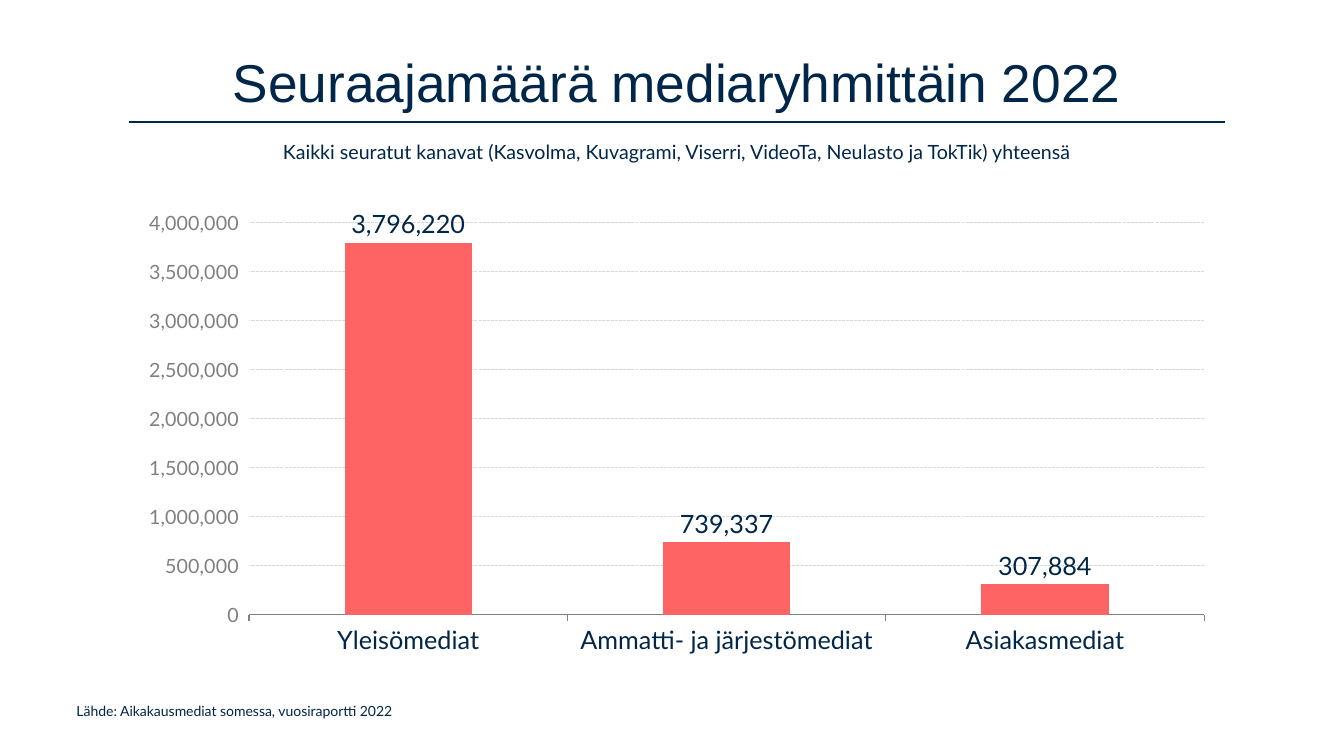
from dataclasses import dataclass

from lxml import etree
from pptx import Presentation
from pptx.chart.data import CategoryChartData
from pptx.dml.color import RGBColor
from pptx.enum.chart import XL_CHART_TYPE as ChartType
from pptx.enum.chart import XL_LABEL_POSITION as LabelPos
from pptx.enum.chart import XL_TICK_MARK as Tick
from pptx.enum.dml import MSO_LINE as Dash
from pptx.enum.shapes import MSO_CONNECTOR as Connector
from pptx.enum.text import MSO_ANCHOR as Anchor
from pptx.enum.text import MSO_AUTO_SIZE as AutoSize
from pptx.enum.text import PP_ALIGN as Align
from pptx.oxml.ns import qn
from pptx.util import Inches, Pt


@dataclass(frozen=True)
class Theme:
    navy: str = "002649"
    coral: str = "FF6464"
    gray: str = "808080"
    grid: str = "D9D9D9"
    heading_font: str = "Arial"
    body_font: str = "Lato"
    title_size: int = 38
    label_size: int = 18
    text_size: int = 14
    source_size: int = 10


THEME = Theme()
LEFT, WIDTH = 1.28, 10.87


def rgb(color):
    return RGBColor.from_string(color)


def style_font(font, size, color=THEME.navy, name=THEME.body_font):
    font.name = name
    font.size = Pt(size)
    font.bold = False
    font.color.rgb = rgb(color)


def write_text(tf, text, size, name=THEME.body_font, align=Align.LEFT,
               anchor=Anchor.TOP, spacing=None, auto_size=AutoSize.NONE):
    tf.word_wrap = True
    tf.auto_size = auto_size
    tf.vertical_anchor = anchor
    p = tf.paragraphs[0]
    p.alignment = align
    p.line_spacing = spacing
    r = p.add_run()
    r.text = text
    style_font(r.font, size, name=name)


def add_header(slide, title, subtitle, x, y, w):
    sp = slide.shapes.title
    sp.left, sp.top, sp.width, sp.height = map(Inches, (x, y, w, 0.71))
    write_text(sp.text_frame, title, THEME.title_size, name=THEME.heading_font,
               align=Align.CENTER, anchor=Anchor.MIDDLE, spacing=0.9)

    rule_y = Inches(y + 0.72)
    rule = slide.shapes.add_connector(Connector.STRAIGHT, Inches(x), rule_y,
                                      Inches(x + w), rule_y)
    rule.line.color.rgb = rgb(THEME.navy)
    rule.line.width = Pt(1)
    etree.SubElement(rule._element.spPr, qn("a:effectLst"))

    box = slide.shapes.add_textbox(*map(Inches, (x, y + 0.85, w, 0.34)))
    write_text(box.text_frame, subtitle, THEME.text_size, align=Align.CENTER,
               auto_size=AutoSize.SHAPE_TO_FIT_TEXT)


def add_follower_chart(slide, followers, x, y, w, h):
    data = CategoryChartData(number_format="#,##0")
    data.categories = list(followers)
    data.add_series("Series 1", list(followers.values()))
    chart = slide.shapes.add_chart(ChartType.COLUMN_CLUSTERED,
                                   *map(Inches, (x, y, w, h)), data).chart
    chart.has_legend = False
    chart.has_title = False
    style_font(chart.font, THEME.label_size)

    cat_axis = chart.category_axis
    cat_axis.major_tick_mark = Tick.OUTSIDE
    cat_axis.format.line.color.rgb = rgb(THEME.gray)
    style_font(cat_axis.tick_labels.font, THEME.label_size)

    val_axis = chart.value_axis
    val_axis.minimum_scale = 0
    val_axis.maximum_scale = 4_000_000
    val_axis.major_unit = 500_000
    val_axis.major_tick_mark = Tick.OUTSIDE
    val_axis.format.line.fill.background()
    val_axis.tick_labels.number_format = "#,##0"
    val_axis.tick_labels.number_format_is_linked = False
    style_font(val_axis.tick_labels.font, THEME.text_size, THEME.gray)
    grid = val_axis.major_gridlines.format.line
    grid.color.rgb = rgb(THEME.grid)
    grid.width = Pt(0.75)
    grid.dash_style = Dash.SQUARE_DOT

    plot = chart.plots[0]
    plot.gap_width = 150
    plot.vary_by_categories = False
    fill = plot.series[0].format.fill
    fill.solid()
    fill.fore_color.rgb = rgb(THEME.coral)
    plot.has_data_labels = True
    labels = plot.data_labels
    labels.show_value = True
    labels.position = LabelPos.OUTSIDE_END
    labels.number_format = "#,##0"
    labels.number_format_is_linked = False
    style_font(labels.font, THEME.label_size)


def add_source(slide, text, x, y, w, h):
    box = slide.shapes.add_textbox(*map(Inches, (x, y, w, h)))
    write_text(box.text_frame, text, THEME.source_size,
               auto_size=AutoSize.SHAPE_TO_FIT_TEXT)


def main():
    prs = Presentation()
    prs.slide_width, prs.slide_height = Inches(13.33), Inches(7.5)
    slide = prs.slides.add_slide(prs.slide_layouts[5])
    add_header(slide, "Seuraajamäärä mediaryhmittäin 2022",
               "Kaikki seuratut kanavat (Kasvolma, Kuvagrami, Viserri, "
               "VideoTa, Neulasto ja TokTik) yhteensä", LEFT, 0.49, WIDTH)
    add_follower_chart(slide, {"Yleisömediat": 3796220,
                               "Ammatti- ja järjestömediat": 739337,
                               "Asiakasmediat": 307884}, 1.26, 2, 10.9, 4.59)
    add_source(slide, "Lähde: Aikakausmediat somessa, vuosiraportti 2022",
               0.66, 6.92, 6.58, 0.44)
    prs.save("out.pptx")


if __name__ == "__main__":
    main()
